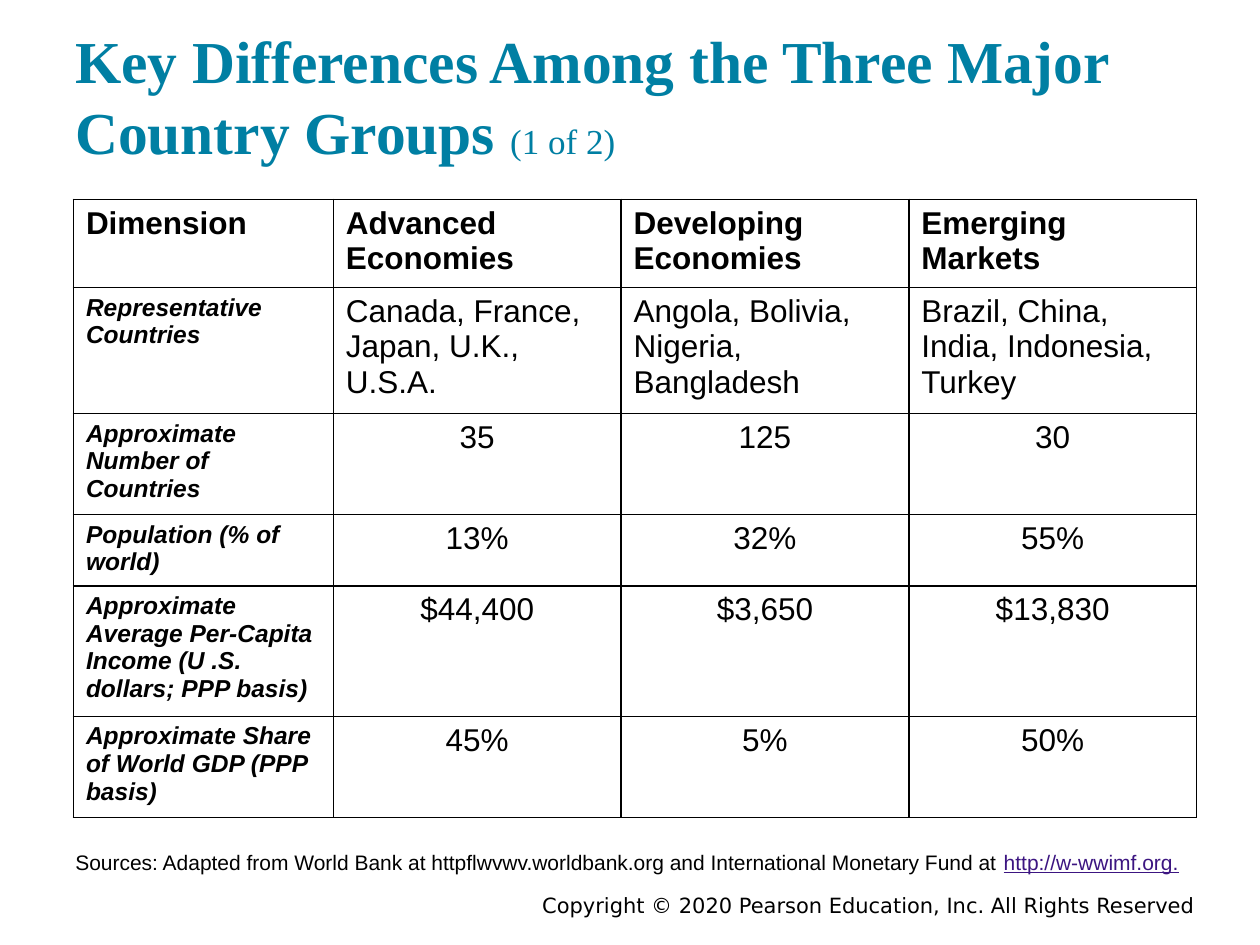
from dataclasses import dataclass

from lxml.etree import SubElement
from pptx import Presentation
from pptx.dml.color import RGBColor
from pptx.enum.text import MSO_ANCHOR, PP_ALIGN
from pptx.oxml.ns import qn
from pptx.util import Cm, Pt


@dataclass(frozen=True)
class Theme:
    """Colours, fonts and type sizes of the slide."""

    ink: str = "000000"
    heading: str = "007FA3"
    link: str = "3C1581"
    serif: str = "Times New Roman"
    sans: str = "Arial"
    legal: str = "DejaVu Sans"
    title_size: int = 34
    part_size: int = 20
    cell_size: int = 18
    dimension_size: int = 14
    note_size: int = 12
    border: int = 1


THEME = Theme()

HEADER = ["Dimension", "Advanced\nEconomies", "Developing\nEconomies", "Emerging\nMarkets"]
DIMENSIONS = [
    ["Representative Countries", "Canada, France, Japan, U.K., U.S.A.",
     "Angola, Bolivia,\nNigeria, Bangladesh", "Brazil, China, India, Indonesia, Turkey"],
    ["Approximate Number of Countries", "35", "125", "30"],
    ["Population (% of world)", "13%", "32%", "55%"],
    ["Approximate Average Per-Capita Income (U .S. dollars; PPP basis)",
     "$44,400", "$3,650", "$13,830"],
    ["Approximate Share of World GDP (PPP basis)", "45%", "5%", "50%"],
]
COLUMN_WIDTHS = [5.24, 5.8, 5.8, 5.8]
ROW_HEIGHTS = [1.67, 2.39, 1.92, 1.36, 2.48, 1.92]


def add_run(paragraph, text, size, face, color=THEME.ink, bold=False, italic=False, underline=False):
    """Append one formatted run to a paragraph."""
    run = paragraph.add_run()
    run.text = text
    font = run.font
    font.size, font.name = Pt(size), face
    font.bold, font.italic, font.underline = bold, italic, underline
    font.color.rgb = RGBColor.from_string(color)


def add_text_frame(slide, box, inset, anchor):
    """Add a wrapping text box and return its first paragraph."""
    frame = slide.shapes.add_textbox(*map(Cm, box)).text_frame
    frame.word_wrap = True
    frame.vertical_anchor = anchor
    frame.margin_top = frame.margin_bottom = Cm(inset)
    frame.margin_left = frame.margin_right = Cm(0.25)
    return frame.paragraphs[0]


def add_title(slide, box):
    """Write the heading with its part number."""
    title = add_text_frame(slide, box, 0.25, MSO_ANCHOR.BOTTOM)
    add_run(title, "Key Differences Among the Three Major Country Groups ",
            THEME.title_size, THEME.serif, THEME.heading, bold=True)
    add_run(title, "(1 of 2)", THEME.part_size, THEME.serif, THEME.heading)


def style_cell(cell):
    """Give a cell thin borders on all sides and no fill."""
    properties = cell._tc.get_or_add_tcPr()
    for side in ("a:lnL", "a:lnR", "a:lnT", "a:lnB"):
        line = SubElement(properties, qn(side), w=str(Pt(THEME.border)))
        fill = SubElement(line, qn("a:solidFill"))
        SubElement(fill, qn("a:srgbClr"), val=THEME.ink)
    cell.fill.background()


def fill_cell(cell, text, row, column):
    """Write a cell in the style of its row and column."""
    is_dimension = row > 0 and column == 0
    is_figure = row > 1 and column > 0
    size = THEME.dimension_size if is_dimension else THEME.cell_size
    frame = cell.text_frame
    for index, line in enumerate(text.split("\n")):
        paragraph = frame.add_paragraph() if index else frame.paragraphs[0]
        paragraph.alignment = PP_ALIGN.CENTER if is_figure else PP_ALIGN.LEFT
        add_run(paragraph, line, size, THEME.sans,
                bold=row == 0 or column == 0, italic=is_dimension)


def add_comparison(slide, left, top):
    """Add the table that compares the country groups."""
    rows = [HEADER, *DIMENSIONS]
    table = slide.shapes.add_table(
        len(rows), len(HEADER), Cm(left), Cm(top),
        Cm(sum(COLUMN_WIDTHS)), Cm(sum(ROW_HEIGHTS))).table
    table.horz_banding = False
    table.first_row = False
    for column, width in zip(table.columns, COLUMN_WIDTHS):
        column.width = Cm(width)
    for row, height in zip(table.rows, ROW_HEIGHTS):
        row.height = Cm(height)
    for r, texts in enumerate(rows):
        for c, text in enumerate(texts):
            cell = table.cell(r, c)
            style_cell(cell)
            fill_cell(cell, text, r, c)


def add_sources(slide, box):
    """Write the source line under the table."""
    sources = add_text_frame(slide, box, 0.25, MSO_ANCHOR.BOTTOM)
    add_run(sources, "Sources: Adapted from World Bank at httpflwvwv.worldbank.org "
            "and International Monetary Fund at ", THEME.note_size, THEME.sans)
    add_run(sources, "http://w-wwimf.org.", THEME.note_size, THEME.sans, THEME.link, underline=True)


def add_copyright(slide, box):
    """Write the copyright line at the foot of the slide."""
    notice = add_text_frame(slide, box, 0.13, MSO_ANCHOR.TOP)
    notice.alignment = PP_ALIGN.RIGHT
    add_run(notice, "Copyright © 2020 Pearson Education, Inc. All Rights Reserved",
            THEME.note_size, THEME.legal)


def main():
    """Build and save the slide."""
    deck = Presentation()
    deck.slide_width, deck.slide_height = Cm(25.4), Cm(19.05)
    slide = deck.slides.add_slide(deck.slide_layouts[6])
    add_copyright(slide, (4.45, 17.86, 19.89, 0.56))
    add_title(slide, (1.27, 0.64, 22.86, 2.97))
    add_comparison(slide, 1.48, 4.02)
    add_sources(slide, (1.27, 16.94, 22.86, 0.94))
    deck.save("out.pptx")


if __name__ == "__main__":
    main()
